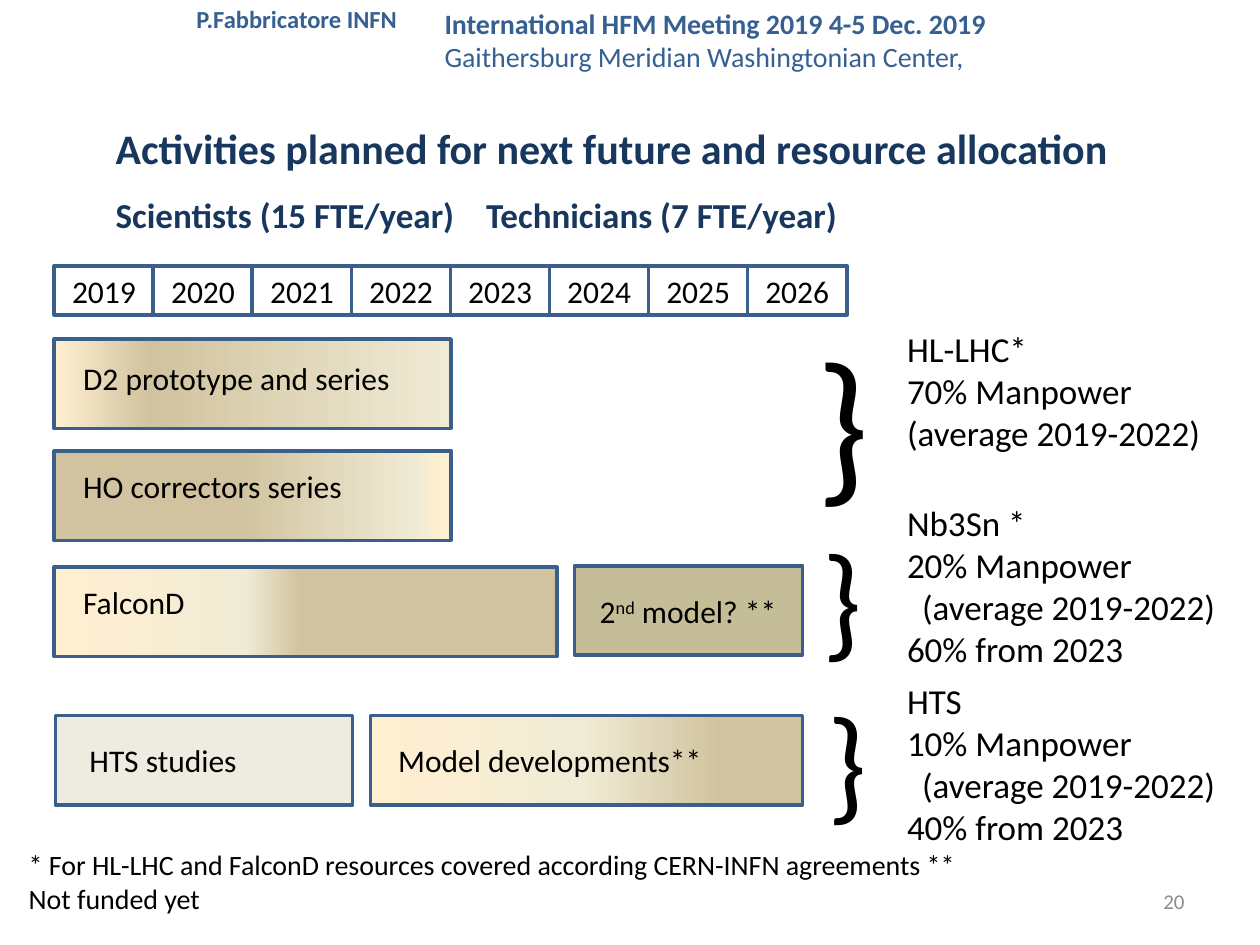
"""Build the slide on planned activities and resource allocation."""
from dataclasses import dataclass

import lxml.etree
import pptx
import pptx.dml.color
import pptx.enum.shapes
import pptx.enum.text
import pptx.oxml.ns
import pptx.util

Inches = pptx.util.Inches
Align = pptx.enum.text.PP_ALIGN
Anchor = pptx.enum.text.MSO_ANCHOR
qn = pptx.oxml.ns.qn


@dataclass(frozen=True)
class Theme:
    """Font, colours and type sizes of the slide."""
    font: str = "Calibri"
    text: str = "000000"
    header: str = "376092"
    title: str = "17375E"
    border: str = "3A5F8C"
    number: str = "8C8C8C"
    white: str = "FFFFFF"
    pale: str = "EEECE1"
    olive: str = "C4BD97"
    sand: str = "FFEFD1"
    cream: str = "F0EBD5"
    tan: str = "D1C39F"
    small: int = 12
    author: int = 14
    note: int = 16
    label: int = 18
    body: int = 20
    heading: int = 24
    brace: int = 72
    big_brace: int = 96


T = Theme()


def rgb(value):
    """Turn a hex string into a colour."""
    return pptx.dml.color.RGBColor.from_string(value)


def style(p, size, color=T.text, bold=False):
    """Set the font of a paragraph."""
    f = p.font
    f.name, f.size, f.bold = T.font, pptx.util.Pt(size), bold
    f.color.rgb = rgb(color)


def add_text(s, box, lines, size, color=T.text, bold=False):
    """Add a text box with one paragraph per line and return its frame."""
    tf = s.shapes.add_textbox(*map(Inches, box)).text_frame
    tf.word_wrap = True
    tf.text = "\n".join(lines)
    for p in tf.paragraphs:
        style(p, size, color, bold)
    return tf


def set_gradient(sp, stops, angle):
    """Fill a shape with a linear gradient of (percent, colour) stops."""
    sp.fill.gradient()
    sp.fill.gradient_angle = angle
    gs_lst = sp._element.spPr.find(qn("a:gradFill")).find(qn("a:gsLst"))
    for gs in list(gs_lst):
        gs_lst.remove(gs)
    for pos, color in stops:
        gs = lxml.etree.SubElement(gs_lst, qn("a:gs"), pos=str(pos * 1000))
        lxml.etree.SubElement(gs, qn("a:srgbClr"), val=color)


def add_box(s, box, fill, angle=0):
    """Add an outlined rectangle with a solid or gradient fill."""
    sp = s.shapes.add_shape(pptx.enum.shapes.MSO_SHAPE.RECTANGLE, *map(Inches, box))
    sp.shadow.inherit = False
    if isinstance(fill, str):
        sp.fill.solid()
        sp.fill.fore_color.rgb = rgb(fill)
    else:
        set_gradient(sp, fill, angle)
    sp.line.color.rgb = rgb(T.border)
    sp.line.width = pptx.util.Pt(2)
    return sp


def add_years(s):
    """Add the row of year cells."""
    for i in range(8):
        tf = add_box(s, (0.43 + 0.786 * i, 2.11, 0.79, 0.39), T.white).text_frame
        tf.margin_left = tf.margin_right = 0
        p = tf.paragraphs[0]
        p.text = str(2019 + i)
        p.alignment = Align.CENTER
        style(p, T.label)


def add_bar(s, left, top, width, runs, inset, fill, angle=0):
    """Add an activity bar; every second run is superscript."""
    tf = add_box(s, (left, top, width, 0.71), fill, angle).text_frame
    tf.vertical_anchor = Anchor.TOP
    tf.margin_left, tf.margin_top = map(Inches, inset)
    tf.margin_right = 0
    p = tf.paragraphs[0]
    p.alignment = Align.LEFT
    for i, text in enumerate(runs):
        r = p.add_run()
        r.text = text
        if i % 2:
            r._r.get_or_add_rPr().set("baseline", "30000")
    style(p, T.label)


def add_share(s, top, lines, indented=None):
    """Add a manpower summary, optionally indenting one line."""
    tf = add_text(s, (7.1, top, 2.79, 0.11 + 0.335 * len(lines)), lines, T.body)
    if indented is not None:
        pPr = tf.paragraphs[indented]._p.get_or_add_pPr()
        pPr.set("marL", str(Inches(0.12)))
        pPr.set("indent", "0")


def add_title(s):
    """Add the title and the tabbed staffing line."""
    tf = add_text(s, (0.82, 0.72, 8.16, 1.21),
                  ["Activities planned for next future and resource allocation"],
                  T.heading, T.title, True)
    p = tf.add_paragraph()
    p.text = "Scientists (15 FTE/year)\tTechnicians (7 FTE/year)"
    tabs = lxml.etree.SubElement(p._p.get_or_add_pPr(), qn("a:tabLst"))
    lxml.etree.SubElement(tabs, qn("a:tab"), pos=str(Inches(2.94)), algn="l")
    style(p, T.body, T.title, True)
    for p in tf.paragraphs:
        p.line_spacing = 1.5


def main():
    """Build and save the slide."""
    prs = pptx.Presentation()
    prs.slide_width, prs.slide_height = Inches(10), Inches(7.5)
    s = prs.slides.add_slide(prs.slide_layouts[6])

    tf = add_text(s, (3.43, 0, 4.56, 0.64),
                  ["International HFM Meeting 2019 4-5 Dec. 2019",
                   "Gaithersburg Meridian Washingtonian Center,"], T.note, T.header, True)
    tf.paragraphs[1].font.bold = False
    add_text(s, (1.46, -0.02, 1.9, 0.34), ["P.Fabbricatore INFN"], T.author, T.header, True)
    add_title(s)
    add_years(s)

    add_bar(s, 0.43, 2.69, 3.15, ["D2 prototype and series"], (0.23, 0.16),
            [(0, T.sand), (24, T.tan), (100, T.cream)])
    add_bar(s, 0.43, 3.58, 3.15, ["HO correctors series"], (0.23, 0.13),
            [(2, T.sand), (9, T.cream), (53, T.tan)], 180)
    add_bar(s, 0.43, 4.5, 3.99, ["FalconD"], (0.23, 0.13),
            [(2, T.sand), (38, T.cream), (49, T.tan)])
    add_bar(s, 4.56, 4.49, 1.81, ["2", "nd", " model? **"], (0.2, 0.21), T.olive)
    add_bar(s, 0.44, 5.68, 2.36, ["HTS studies"], (0.27, 0.2), T.pale)
    add_bar(s, 2.94, 5.68, 3.43, ["Model developments**"], (0.22, 0.2),
            [(2, T.sand), (49, T.cream), (81, T.tan)])

    for box, size in (((6.38, 2.46, 0.85, 1.72), T.big_brace),
                      ((6.43, 4.07, 0.56, 1.31), T.brace),
                      ((6.47, 5.37, 0.56, 1.31), T.brace)):
        add_text(s, box, ["}"], size)

    average = "(average 2019-2022)"
    add_share(s, 2.55, ["HL-LHC*", "70% Manpower", average])
    add_share(s, 3.93, ["Nb3Sn *", "20% Manpower", average, "60% from 2023"], 2)
    add_share(s, 5.34, ["HTS", "10% Manpower", average, "40% from 2023"], 2)

    add_text(s, (0.13, 6.68, 7.63, 0.64),
             ["* For HL-LHC and FalconD resources covered according "
              "CERN-INFN agreements ** Not funded yet"], T.note)
    tf = add_text(s, (7.17, 6.95, 2.33, 0.4), ["20"], T.small, T.number)
    tf.vertical_anchor = Anchor.MIDDLE
    tf.paragraphs[0].alignment = Align.RIGHT
    prs.save("out.pptx")


if __name__ == "__main__":
    main()
